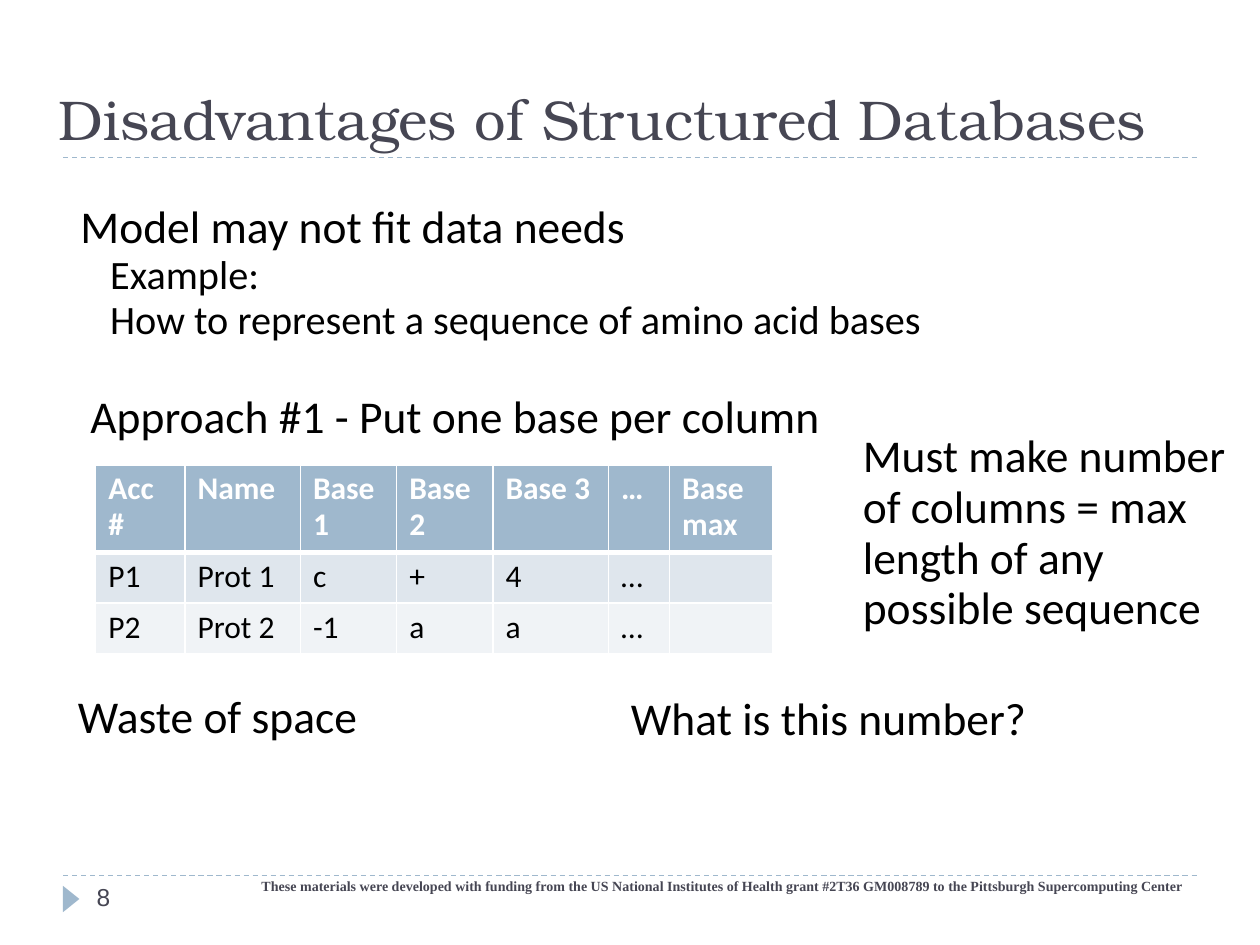
"""Build the slide on the disadvantages of structured databases."""
import lxml.etree
import pptx
import pptx.dml.color
import pptx.enum.dml
import pptx.enum.shapes
import pptx.enum.text
import pptx.oxml.ns
import pptx.util

Pt = pptx.util.Pt
RGBColor = pptx.dml.color.RGBColor
Align = pptx.enum.text.PP_ALIGN
Anchor = pptx.enum.text.MSO_ANCHOR
qn = pptx.oxml.ns.qn

BLUE = RGBColor(0x9F, 0xB8, 0xCD)
SLATE = RGBColor(0x46, 0x46, 0x53)
BLACK = RGBColor(0, 0, 0)
WHITE = RGBColor(255, 255, 255)
ROW_FILLS = [BLUE, RGBColor(0xDF, 0xE6, 0xED), RGBColor(0xF0, 0xF3, 0xF6)]

TITLE = "Disadvantages of Structured Databases"
FUNDING = ("These materials were developed with funding from the US National Institutes of Health "
           "grant #2T36 GM008789 to the Pittsburgh Supercomputing Center")
PAGE_NUMBER = "8"
MODEL_POINT = "Model may not fit data needs"
MODEL_EXAMPLES = ["Example:", "How to represent a sequence of amino acid bases"]
NOTES = [
    ("Approach #1 - Put one base per column", (44.6, 221, 445, 36.7)),
    ("Waste of space", (37.4, 392.4, 258.5, 36.7)),
    ("Must make number of columns = max length of any possible sequence",
     (486, 243.4, 222, 124.6)),
    ("What is this number?", (353.5, 393.8, 242.6, 36.7)),
]
SEQUENCES = [
    ["Acc #", "Name", "Base 1", "Base 2", "Base 3", "…", "Base max"],
    ["P1", "Prot 1", "c", "+", "4", "…", ""],
    ["P2", "Prot 2", "-1", "a", "a", "…", ""],
]
TABLE_CORNER = (54.7, 265.7)
COLUMN_WIDTHS = [51, 66, 55, 55, 66, 35, 59]
ROW_HEIGHTS = [50, 29, 29]
RULE_HEIGHTS = [500.4, 90]


def add_text(para, text, size=26, font="Calibri", color=BLACK, bold=False,
             align=None, spacing=0.93, level=0):
    para.alignment = align
    para.line_spacing = spacing
    if level:
        para.level = level
        properties = para._p.get_or_add_pPr()
        properties.set("marL", str(Pt(34)))
        properties.set("indent", str(Pt(-17)))
    span = para.add_run()
    span.text = text
    span.font.size = Pt(size)
    span.font.name = font
    span.font.bold = bold
    span.font.color.rgb = color


def add_box(page, text, place, anchor=Anchor.TOP, **style):
    box = page.shapes.add_textbox(*map(Pt, place))
    box.text_frame.word_wrap = True
    box.text_frame.vertical_anchor = anchor
    add_text(box.text_frame.paragraphs[0], text, **style)
    return box


def add_rule(page, top):
    rule = page.shapes.add_connector(
        pptx.enum.shapes.MSO_CONNECTOR.STRAIGHT, Pt(36), Pt(top), Pt(684), Pt(top))
    rule.line.color.rgb = BLUE
    rule.line.width = Pt(0.75)
    rule.line.dash_style = pptx.enum.dml.MSO_LINE.DASH
    lxml.etree.SubElement(rule._element.spPr, qn("a:effectLst"))


def add_marker(page):
    marker = page.shapes.add_shape(
        pptx.enum.shapes.MSO_SHAPE.ISOSCELES_TRIANGLE, Pt(33.1), Pt(509), Pt(15.1), Pt(9.4))
    marker.rotation = 90
    marker.shadow.inherit = False
    marker.fill.solid()
    marker.fill.fore_color.rgb = BLUE
    marker.line.fill.background()


def add_borders(cell, widths):
    properties = cell._tc.get_or_add_tcPr()
    for side, width in widths.items():
        border = lxml.etree.SubElement(properties, qn("a:ln" + side), w=str(Pt(width)))
        fill = lxml.etree.SubElement(border, qn("a:solidFill"))
        lxml.etree.SubElement(fill, qn("a:srgbClr"), val=str(WHITE))


def add_sequence_table(page):
    table = page.shapes.add_table(
        len(SEQUENCES), len(COLUMN_WIDTHS), *map(Pt, TABLE_CORNER),
        Pt(sum(COLUMN_WIDTHS)), Pt(sum(ROW_HEIGHTS))).table
    for column, width in zip(table.columns, COLUMN_WIDTHS):
        column.width = Pt(width)
    for index, (row, height) in enumerate(zip(table.rows, ROW_HEIGHTS)):
        row.height = Pt(height)
        header = index == 0
        for cell, text in zip(row.cells, SEQUENCES[index]):
            add_borders(cell, {"L": 1, "R": 1, "T": 3 if index == 1 else 1,
                               "B": 3 if header else 1})
            cell.fill.solid()
            cell.fill.fore_color.rgb = ROW_FILLS[index]
            add_text(cell.text_frame.paragraphs[0], text, size=18, bold=header,
                     color=WHITE if header else BLACK)


def main():
    deck = pptx.Presentation()
    deck.slide_width, deck.slide_height = Pt(720), Pt(540)
    page = deck.slides.add_slide(deck.slide_layouts[6])
    for top in RULE_HEIGHTS:
        add_rule(page, top)
    add_marker(page)
    add_box(page, TITLE, (26.6, 12.2, 669.6, 77.8), anchor=Anchor.BOTTOM, size=32,
            font="TeX Gyre Bonum", color=SLATE, spacing=1.0)
    add_box(page, FUNDING, (113, 498.2, 571, 28.8), size=8, font="Times New Roman",
            color=SLATE, bold=True, align=Align.RIGHT, spacing=1.0)
    add_box(page, PAGE_NUMBER, (48.2, 500.4, 156.2, 28.8), size=14, font="Arial",
            color=SLATE, spacing=1.0)
    model = add_box(page, MODEL_POINT, (38.9, 112.3, 645, 88.6))
    for example in MODEL_EXAMPLES:
        add_text(model.text_frame.add_paragraph(), example, size=23, level=1)
    add_sequence_table(page)
    for text, place in NOTES:
        add_box(page, text, place)
    deck.save("out.pptx")


if __name__ == "__main__":
    main()
